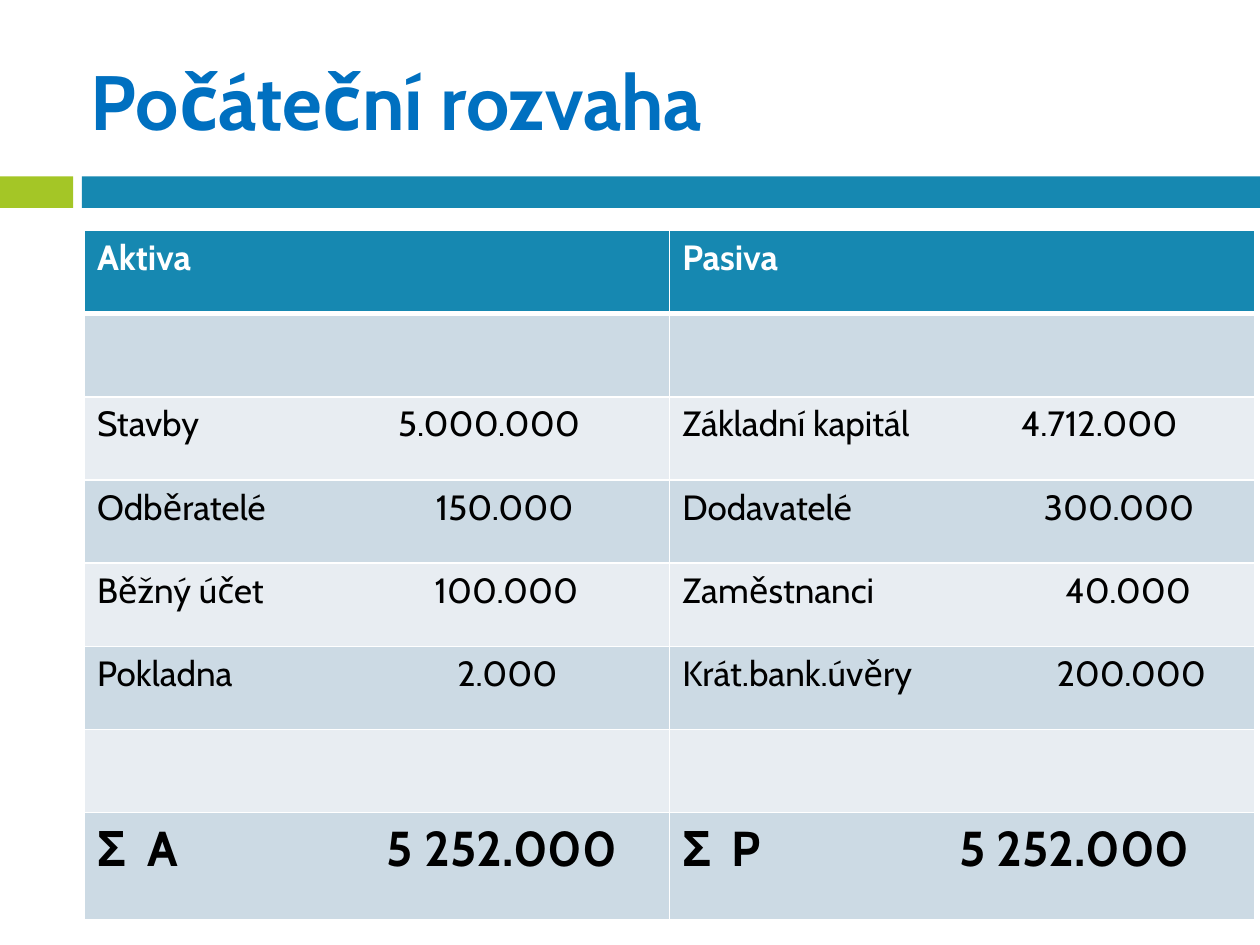
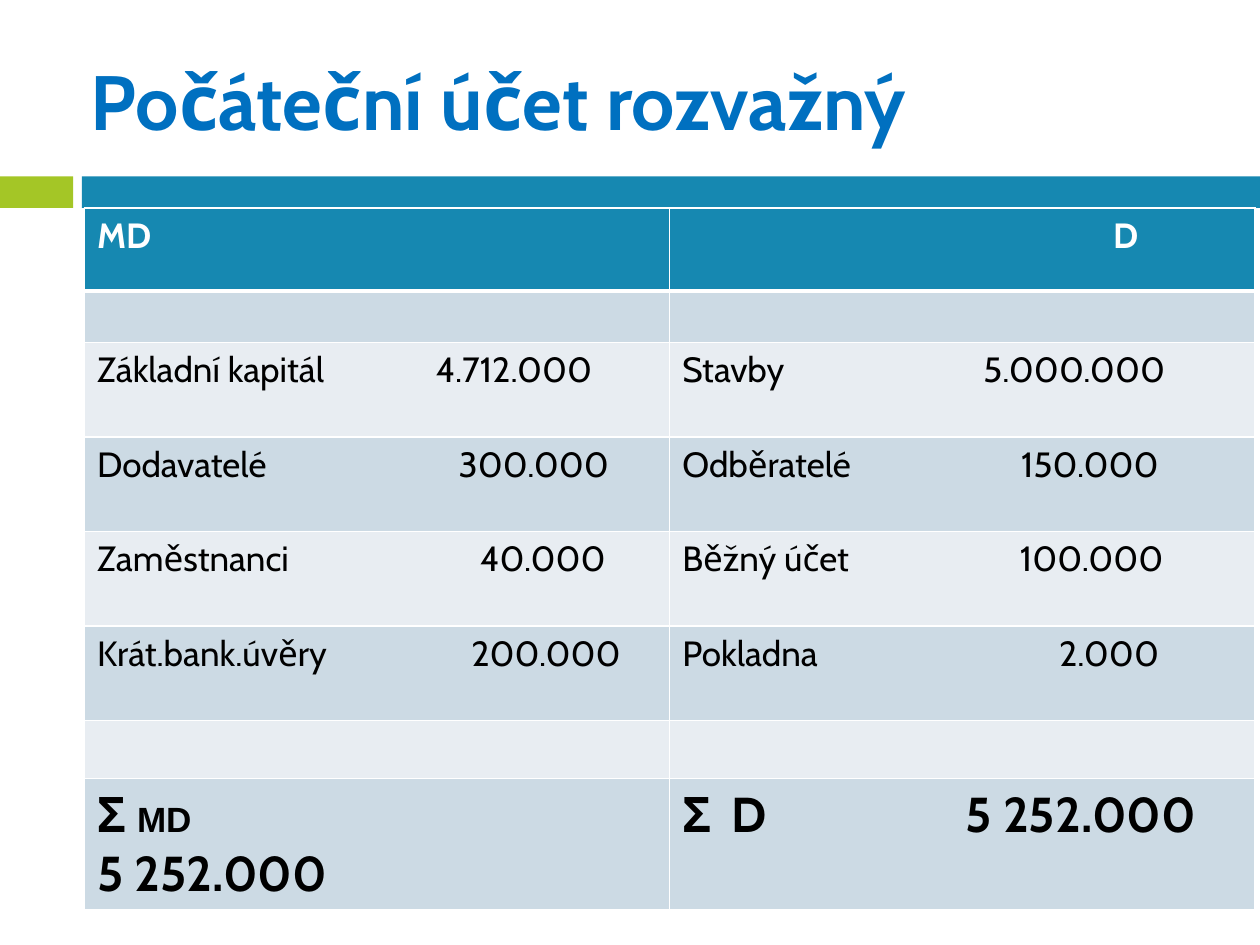
from collections import namedtuple

from lxml import etree
from pptx import Presentation
from pptx.dml.color import RGBColor
from pptx.enum.shapes import MSO_SHAPE
from pptx.enum.text import MSO_ANCHOR, PP_ALIGN
from pptx.oxml.ns import qn
from pptx.util import Inches, Pt

RECTANGLE = MSO_SHAPE.RECTANGLE
MIDDLE = MSO_ANCHOR.MIDDLE
LEFT, JUSTIFY = PP_ALIGN.LEFT, PP_ALIGN.JUSTIFY

SLIDE_WIDTH, SLIDE_HEIGHT = Inches(10), Inches(7.5)
COLUMNS, ROWS = 100, 75
FONT = "Cabin"
WHITE, BLACK = "FFFFFF", "000000"
TITLE_BLUE, BAND_BLUE, ACCENT_GREEN = "0070C0", "1688B1", "A4C626"
STRIPES = ("CCDAE4", "E8EDF2")
BODY_SIZE, TOTAL_SIZE, TITLE_SIZE = 20, 28, 44
HEADER_RULE, CELL_RULE = 3, 1

Box = namedtuple("Box", "left top width height")
Entry = namedtuple("Entry", "text stops", defaults=((),))

TITLE_BOX = Box(6.7, 2.5, 89.2, 10.8)
BAND_BOX = Box(0, 14, 100, 2.5)
TABLE_LEFT, TABLE_WIDTH = 6.7, 92.9

EMPTY = Entry("")
BUILDINGS = Entry("Stavby\t5.000.000", (23.9,))
CUSTOMERS = Entry("Odběratelé\t150.000", (26.9,))
BANK_ACCOUNT = Entry("Běžný účet\t100.000", (26.8,))
CAPITAL = Entry("Základní kapitál\t4.712.000", (26.9,))
SUPPLIERS = Entry("Dodavatelé\t300.000", (28.7,))
EMPLOYEES = Entry("Zaměstnanci\t40.000", (30.4,))
BANK_LOANS = Entry("Krát.bank.úvěry\t200.000", (29.7,))

OPENING_BALANCE = [
    (Entry("Aktiva"), Entry("Pasiva")),
    (EMPTY, EMPTY),
    (BUILDINGS, CAPITAL),
    (CUSTOMERS, SUPPLIERS),
    (BANK_ACCOUNT, EMPLOYEES),
    (Entry("Pokladna\t2.000", (28.6,)), BANK_LOANS),
    (EMPTY, EMPTY),
    (Entry("Ʃ\tA\t5 252.000", (4, 23)), Entry("Ʃ\tP\t5 252.000", (3.9, 22))),
]
OPENING_ACCOUNT = [
    (Entry("MD"), Entry("\tD", (34.2,))),
    (EMPTY, EMPTY),
    (CAPITAL, BUILDINGS),
    (SUPPLIERS, CUSTOMERS),
    (EMPLOYEES, BANK_ACCOUNT),
    (BANK_LOANS, Entry("Pokladna\t2.000", (29.9,))),
    (EMPTY, EMPTY),
    (EMPTY, Entry("Ʃ\tD\t5 252.000", (3.9, 22.5))),
]
BALANCE_HEIGHTS = [6.6] * 7 + [8.5]
ACCOUNT_HEIGHTS = [6.6, 4.1] + [7.5] * 4 + [4.6, 10.4]


def across(columns):
    """Turn grid columns into a length."""
    return round(SLIDE_WIDTH * columns / COLUMNS)


def down(rows):
    """Turn grid rows into a length."""
    return round(SLIDE_HEIGHT * rows / ROWS)


def place(box):
    """Turn a grid box into left, top, width and height."""
    return across(box.left), down(box.top), across(box.width), down(box.height)


def color(value):
    """Turn a hex string into a colour."""
    return RGBColor.from_string(value)


def write(para, text, size=BODY_SIZE, fill=BLACK, bold=False, font=FONT):
    """Add one formatted span to a paragraph."""
    span = para.add_run()
    span.text = text
    span.font.name = font
    span.font.size = Pt(size)
    span.font.bold = bold
    span.font.color.rgb = color(fill)


def set_tab_stops(para, stops):
    """Give a paragraph left tab stops, measured in grid columns."""
    tab_list = etree.SubElement(para._p.get_or_add_pPr(), qn("a:tabLst"))
    for stop in stops:
        etree.SubElement(tab_list, qn("a:tab"), pos=str(across(stop)), algn="l")


def set_borders(cell, top, bottom):
    """Draw white rules round a cell, with widths in points."""
    widths = {"lnL": CELL_RULE, "lnR": CELL_RULE, "lnT": top, "lnB": bottom}
    for side, width in widths.items():
        line = etree.SubElement(cell._tc.get_or_add_tcPr(), qn(f"a:{side}"), w=str(Pt(width)))
        solid = etree.SubElement(line, qn("a:solidFill"))
        etree.SubElement(solid, qn("a:srgbClr"), val=WHITE)


def add_title(page, box, text):
    """Place the slide title in its box."""
    frame = page.shapes.add_textbox(*place(box)).text_frame
    frame.word_wrap = True
    frame.vertical_anchor = MIDDLE
    frame.margin_left = frame.margin_right = Inches(0.05)
    write(frame.paragraphs[0], text, size=TITLE_SIZE, fill=TITLE_BLUE, bold=True)


def add_band(page, box):
    """Split the box into a short green bar and a long blue one."""
    short, start = box.width * 0.058, box.width * 0.065
    parts = ((0, short, ACCENT_GREEN), (start, box.width - start, BAND_BLUE))
    for offset, width, fill in parts:
        bar_box = box._replace(left=box.left + offset, width=width)
        bar = page.shapes.add_shape(RECTANGLE, *place(bar_box))
        bar.shadow.inherit = False
        bar.fill.solid()
        bar.fill.fore_color.rgb = color(fill)
        bar.line.fill.background()


def fill_cell(cell, entry, index, last):
    """Style a ledger cell by its row and write its entry."""
    header, total = index == 0, index == last
    set_borders(cell, HEADER_RULE if index == 1 else CELL_RULE,
                HEADER_RULE if header else CELL_RULE)
    cell.fill.solid()
    cell.fill.fore_color.rgb = color(BAND_BLUE if header else STRIPES[(index - 1) % 2])
    if not entry.text:
        return
    para = cell.text_frame.paragraphs[0]
    para.alignment = JUSTIFY
    if entry.stops:
        set_tab_stops(para, entry.stops)
    write(para, entry.text, size=TOTAL_SIZE if total else BODY_SIZE,
          fill=WHITE if header else BLACK, bold=header or total)


def add_ledger(page, box, entries, heights):
    """Build the two-sided ledger table and return it."""
    table = page.shapes.add_table(len(entries), 2, *place(box)).table
    for column in table.columns:
        column.width = across(box.width / 2)
    for index, (pair, height) in enumerate(zip(entries, heights)):
        table.rows[index].height = down(height)
        for side, entry in enumerate(pair):
            fill_cell(table.cell(index, side), entry, index, len(entries) - 1)
    return table


def write_debit_total(cell):
    """Write the debit total on two lines."""
    para = cell.text_frame.paragraphs[0]
    para.alignment = LEFT
    write(para, "Ʃ ", size=TOTAL_SIZE, bold=True)
    write(para, "MD", font="Arial", bold=True)
    para.add_line_break()
    write(para, "5 252.000", size=TOTAL_SIZE, bold=True)


def add_ledger_slide(deck, title, top, entries, heights):
    """Add a slide with title, band and ledger, and return the ledger."""
    page = deck.slides.add_slide(deck.slide_layouts[6])
    add_band(page, BAND_BOX)
    add_title(page, TITLE_BOX, title)
    box = Box(TABLE_LEFT, top, TABLE_WIDTH, sum(heights))
    return add_ledger(page, box, entries, heights)


def main():
    """Build both ledger slides and save the deck."""
    deck = Presentation()
    deck.slide_width, deck.slide_height = SLIDE_WIDTH, SLIDE_HEIGHT
    add_ledger_slide(deck, "Počáteční rozvaha", 18.3, OPENING_BALANCE, BALANCE_HEIGHTS)
    account = add_ledger_slide(deck, "Počáteční účet rozvažný", 16.5,
                               OPENING_ACCOUNT, ACCOUNT_HEIGHTS)
    write_debit_total(account.cell(len(OPENING_ACCOUNT) - 1, 0))
    deck.save("out.pptx")


if __name__ == "__main__":
    main()
